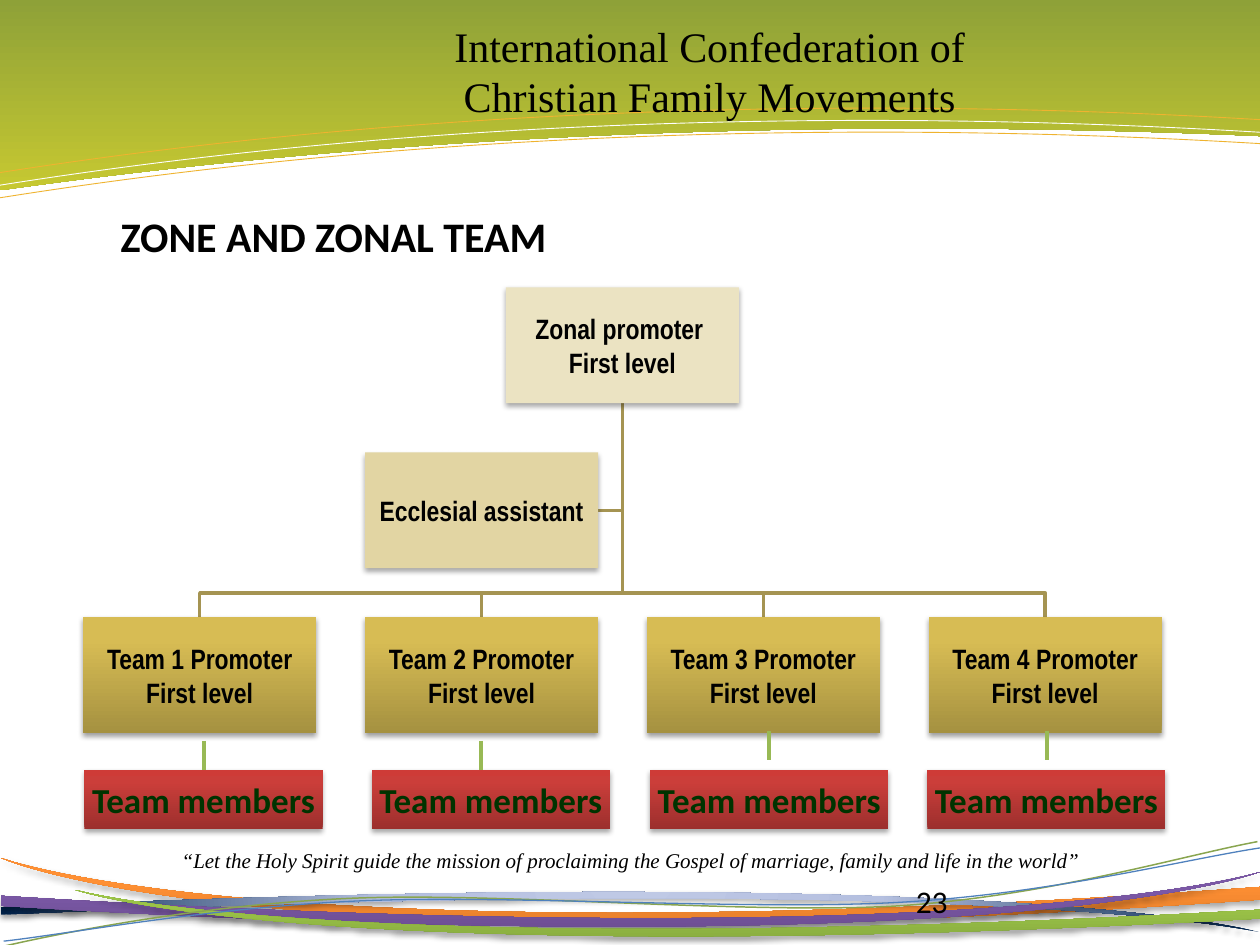
from lxml import etree
from pptx import Presentation
from pptx import util as u
from pptx.dml import color as dml
from pptx.enum import shapes, text
from pptx.oxml import ns

COLORS = {
    "black": "000000", "white": "FFFFFE", "gold_line": "EFB32F",
    "green_line": "89A54F", "blue_line": "4F81BD", "tree": "A59452",
    "promoter": "EBE3C2", "assistant": "E2D5A3", "tick": "98B955",
    "member_text": "003300",
}
GRADIENTS = {
    "banner": [(0, "8EA138"), (100, "C6C831")],
    "orange": [(0, "CC6E20"), (80, "FF9034"), (100, "FF9136")],
    "blue": [(0, "BFC9E5"), (40, "B5C0E0"), (100, "00234D")],
    "purple": [(0, "5F4480"), (80, "7B58A6"), (100, "7C57A8")],
    "green": [(0, "779737"), (80, "9BC348"), (100, "9DC746")],
    "team": [(0, "A59140"), (80, "D7BC54"), (100, "DABF52")],
    "member": [(0, "9C2F2D"), (80, "CB3E3A"), (100, "CE3B37")],
}
WAVES = {
    "orange": [(10, 0.44), (2.12, 1.01), (0.01, 0.21), (0.01, 0.21),
               (0.01, 0.21), (1.92, 1.11), (10, 0.54)],
    "blue": [(0.01, 0.66), (7.9, 0.3), (10, 0.8), (10, 0.8),
             (10, 0.8), (8.09, 0.24), (0.01, 0.6)],
    "purple": [(0.01, 0.51), (7.9, 1), (10, 0.32), (10, 0.32),
               (10, 0.32), (8.09, 1.08), (0.01, 0.59)],
    "green": [(10, 0.62), (2.57, 1.04), (0.59, 0.46), (0.59, 0.46),
              (0.59, 0.46), (2.38, 1.11), (10, 0.69)],
}
THREADS = [
    ("green_line", 0.85, [(0.03, 0.91), (0.51, 0.8), (1.61, 0.58), (2.79, 0.53), (3.98, 0.48),
                          (5.93, 0.66), (7.13, 0.59), (8.33, 0.51), (9.39, 0.19), (9.98, 0.08)]),
    ("blue_line", 0.75, [(0.03, 0.87), (0.5, 0.82), (1.67, 0.6), (2.86, 0.55), (4.05, 0.5),
                         (5.98, 0.63), (7.17, 0.56), (8.36, 0.49), (9.41, 0.22), (10, 0.13)]),
]
HEADER_LINES = [
    ("gold_line", [(10, 0.95), (7.5, 0.8), (3.84, 0.77), (0, 1.37)]),
    ("white", [(0, 1.47), (3.84, 0.86), (7.5, 0.9), (10, 1.05)]),
    ("gold_line", [(0, 1.57), (3.84, 0.96), (7.49, 0.99), (10, 1.14)]),
]


def rgb(name):
    """Return the named colour."""
    return dml.RGBColor.from_string(COLORS[name])


def add_element(parent, tag, **attributes):
    """Append a DrawingML child with the given attributes."""
    values = {key: str(value) for key, value in attributes.items()}
    return etree.SubElement(parent, ns.qn(f"a:{tag}"), values)


def fill_gradient(shape, name, angle=270, radial=False):
    """Fill a shape with a named linear or radial gradient."""
    shape.fill.gradient()
    gradient = shape._element.spPr.find(ns.qn("a:gradFill"))
    gradient.clear()
    stops = add_element(gradient, "gsLst")
    for position, value in GRADIENTS[name]:
        stop = add_element(stops, "gs", pos=position * 1000)
        add_element(stop, "srgbClr", val=value)
    if radial:
        path = add_element(gradient, "path", path="circle")
        add_element(path, "fillToRect", l=50000, t=-80000, r=50000, b=180000)
    else:
        add_element(gradient, "lin", ang=angle * 60000, scaled=0)


def add_shadow(shape, opacity=35, distance=1.8):
    """Give a shape a soft shadow straight below it."""
    shape.shadow.inherit = False
    effects = shape._element.spPr.find(ns.qn("a:effectLst"))
    shadow = add_element(effects, "outerShdw", blurRad=u.Pt(3.1), dist=u.Pt(distance),
                         dir=5400000, rotWithShape=0)
    tint = add_element(shadow, "srgbClr", val=COLORS["black"])
    add_element(tint, "alpha", val=opacity * 1000)


def add_outline(slide, origin, points, color=None, width=0):
    """Draw a coloured open line, or a closed outline ready to be filled."""
    left, top = origin
    places = [(u.Inches(left + x), u.Inches(top + y)) for x, y in points]
    builder = slide.shapes.build_freeform(*places[0])
    builder.add_line_segments(places[1:], close=color is None)
    shape = builder.convert_to_shape()
    shape.shadow.inherit = False
    if color:
        shape.fill.background()
        shape.line.color.rgb = rgb(color)
        shape.line.width = u.Pt(width)
    else:
        shape.line.fill.background()
    return shape


def add_curve(slide, origin, points, color=None, width=0):
    """Draw an outline whose points after the first are triples of cubic curves."""
    shape = add_outline(slide, origin, points, color, width)
    outline = next(shape._element.iter(ns.qn("a:path")))
    segments = outline.findall(ns.qn("a:lnTo"))
    for first in range(0, len(segments) - 2, 3):
        curve = etree.Element(ns.qn("a:cubicBezTo"))
        segments[first].addprevious(curve)
        for segment in segments[first:first + 3]:
            curve.append(segment[0])
            outline.remove(segment)
    return shape


def write(shape, lines, size, font, color="black", bold=False, italic=False,
          align=text.PP_ALIGN.CENTER, wrap=True):
    """Write one paragraph for each line in a shape."""
    frame = shape.text_frame
    frame.word_wrap = wrap
    frame.text = "\n".join(lines)
    for paragraph in frame.paragraphs:
        paragraph.alignment = align
        paragraph.font.size = u.Pt(size)
        paragraph.font.name = font
        paragraph.font.bold = bold
        paragraph.font.italic = italic
        paragraph.font.color.rgb = rgb(color)


def add_label(slide, box, lines, size, font, **style):
    """Add a text box."""
    write(slide.shapes.add_textbox(*map(u.Inches, box)), lines, size, font, **style)


def add_card(slide, box, lines, size=16, font="Arial Narrow", **style):
    """Add a rectangle with bold centred text and no outline."""
    shape = slide.shapes.add_shape(shapes.MSO_SHAPE.RECTANGLE, *map(u.Inches, box))
    shape.line.fill.background()
    write(shape, lines, size, font, bold=True, **style)
    frame = shape.text_frame
    frame.vertical_anchor = text.MSO_ANCHOR.MIDDLE
    frame.margin_left = frame.margin_right = u.Inches(0.01)
    frame.margin_top = frame.margin_bottom = u.Inches(0.01)
    return shape


def add_header(slide, box):
    """Draw the curved banner with the name of the confederation."""
    left, top, width, _ = box
    corner, low = (width, -0.01), (0, 1.51)
    banner = add_curve(slide, (left, top), [(0, -0.01), low, low, low, (3.73, 0.98), (7.3, 0.96),
                                            (width, 1.08), corner, corner, corner])
    fill_gradient(banner, "banner", angle=90)
    for color, points in HEADER_LINES:
        add_curve(slide, (left, top), points, color, 0.5)
    add_label(slide, (left + 3.49, top + 0.11, 4.37, 0.91),
              ["International Confederation of ", "Christian Family Movements "],
              24, "Times New Roman", wrap=False)


def add_footer(slide, box):
    """Draw the waves, the motto and the page number."""
    left, top, _, _ = box
    for name, points in WAVES.items():
        wave = add_curve(slide, (left, top), [*points, points[-1], points[0], points[0]])
        fill_gradient(wave, name, radial=name == "blue")
        add_shadow(wave)
    for color, width, points in THREADS:
        add_curve(slide, (left, top), points, color, width)
    add_label(slide, (left + 0.94, top + 0.08, 8.14, 0.3),
              ["“Let the Holy Spirit guide the mission of proclaiming the Gospel of marriage, "
               "family and life in the world”"], 12, "Times New Roman", italic=True)
    add_label(slide, (left + 7.17, top + 0.35, 2.33, 0.4), ["23"], 18, "Calibri",
              align=text.PP_ALIGN.LEFT)


def add_team_tree(slide, box):
    """Draw the zonal promoter, the assistant and the four teams."""
    left, top, width, _ = box
    card_width, card_height, row_gap = 1.85, 0.92, 0.39
    pitch = (width - card_width) / 3
    row = card_height + row_gap
    middle, team_top = width / 2, 2 * row
    bus = team_top - row_gap / 2
    side = row + card_height / 2
    stem = (middle, card_height)
    add_outline(slide, (left, top), [stem, (middle, side), (pitch + card_width, side)], "tree", 2)
    for column in reversed(range(4)):
        center = column * pitch + card_width / 2
        add_outline(slide, (left, top), [stem, (middle, bus), (center, bus), (center, team_top)],
                    "tree", 2)
    promoter = add_card(slide, (left + middle - card_width / 2, top, card_width, card_height),
                        ["Zonal promoter ", "First level"])
    for column in range(4):
        team = add_card(slide, (left + column * pitch, top + team_top, card_width, card_height),
                        [f"Team {column + 1} Promoter", "First level"])
        fill_gradient(team, "team")
        add_shadow(team, 38, 1.6)
    assistant = add_card(slide, (left + pitch, top + row, card_width, card_height),
                         ["Ecclesial assistant"])
    for card, color in ((promoter, "promoter"), (assistant, "assistant")):
        card.fill.solid()
        card.fill.fore_color.rgb = rgb(color)
        add_shadow(card)


def add_members(slide, box):
    """Draw the member boxes and the short lines above them."""
    left, top, _, height = box
    member_height = 0.47
    member_top = top + height - member_height
    for offset in (0.01, 2.29, 4.5, 6.7):
        member = add_card(slide, (left + offset, member_top, 1.89, member_height),
                          ["Team members"], 20, "Calibri", color="member_text", wrap=False)
        fill_gradient(member, "member")
        add_shadow(member)
    for tick, shift in ((0.96, 0), (3.16, 0), (5.44, -0.08), (7.65, -0.08)):
        ends = (left + tick, top + shift, left + tick, member_top + shift)
        line = slide.shapes.add_connector(shapes.MSO_CONNECTOR.STRAIGHT, *map(u.Inches, ends))
        line.line.color.rgb = rgb("tick")
        line.line.width = u.Pt(2.25)
        add_element(line._element.spPr, "effectLst")


def main():
    """Build and save the slide."""
    presentation = Presentation()
    presentation.slide_width, presentation.slide_height = u.Inches(10), u.Inches(7.5)
    slide = presentation.slides.add_slide(presentation.slide_layouts[6])
    add_header(slide, (0, 0, 10, 1.57))
    add_footer(slide, (0, 6.6, 10, 0.9))
    add_team_tree(slide, (0.66, 2.28, 8.56, 3.54))
    add_members(slide, (0.66, 5.88, 8.59, 0.7))
    add_label(slide, (0.86, 1.62, 3.91, 0.5), ["ZONE AND ZONAL TEAM"], 24, "Calibri",
              bold=True, align=text.PP_ALIGN.LEFT)
    presentation.save("out.pptx")


if __name__ == "__main__":
    main()
